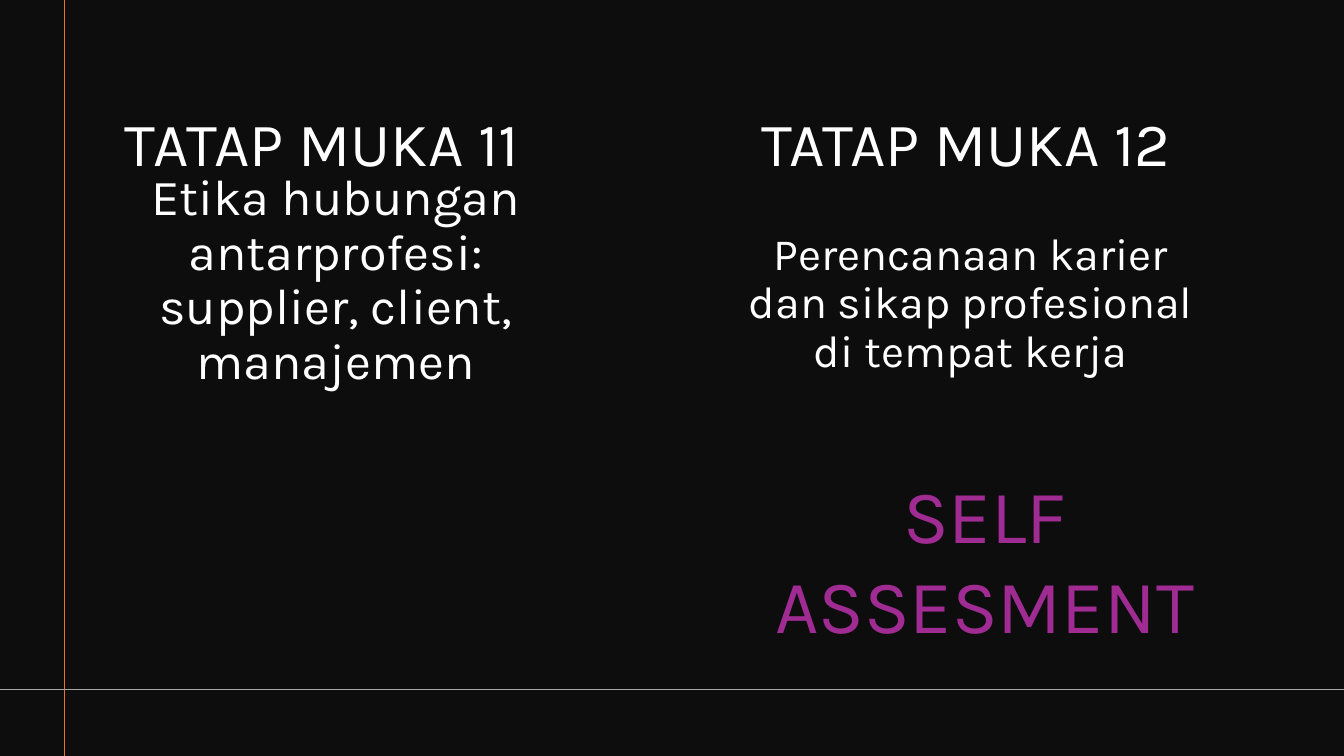
from pptx import Presentation
from pptx.dml.color import RGBColor
from pptx.enum.shapes import MSO_CONNECTOR as Connector, MSO_SHAPE as Shape
from pptx.enum.text import MSO_ANCHOR as Anchor, PP_ALIGN as Align
from pptx.oxml.ns import qn
from pptx.util import Inches, Pt
from lxml.etree import SubElement

COLORS = {
    "night": "0D0D0D",
    "white": "FFFFFF",
    "orange": "E97132",
    "gray": "A6A6A6",
    "purple": "A02B93",
}
WIDTH, HEIGHT = 13.33, 7.5


def color(name):
    return RGBColor.from_string(COLORS[name])


class SlideBuilder:
    """Holds the font and the page that elements are added to."""

    def __init__(self, page, font):
        self.page = page
        self.font = font

    def panel(self, left, top, width, height, fill):
        box = self.page.shapes.add_shape(
            Shape.RECTANGLE, Inches(left), Inches(top), Inches(width), Inches(height))
        box.shadow.inherit = False
        box.fill.solid()
        box.fill.fore_color.rgb = color(fill)
        box.line.fill.background()

    def rule(self, x1, y1, x2, y2, stroke):
        line = self.page.shapes.add_connector(
            Connector.STRAIGHT, Inches(x1), Inches(y1), Inches(x2), Inches(y2))
        line.line.color.rgb = color(stroke)
        line.line.width = Pt(1)
        SubElement(line._element.spPr, qn("a:effectLst"))

    def text(self, words, left, top, width, height, size, fill="white",
             align=Align.CENTER, anchor=Anchor.TOP, spacing=0.9, before=0, after=0):
        box = self.page.shapes.add_textbox(
            Inches(left), Inches(top), Inches(width), Inches(height))
        frame = box.text_frame
        frame.word_wrap = True
        frame.vertical_anchor = anchor
        para = frame.paragraphs[0]
        para.alignment = align
        para.line_spacing = spacing
        para.space_before = Pt(before)
        para.space_after = Pt(after)
        span = para.add_run()
        span.text = words
        span.font.name = self.font
        span.font.size = Pt(size)
        span.font.color.rgb = color(fill)


def main():
    deck = Presentation()
    deck.slide_width, deck.slide_height = Inches(WIDTH), Inches(HEIGHT)
    page = deck.slides.add_slide(deck.slide_layouts[6])
    slide = SlideBuilder(page, "Karla")

    slide.panel(0, 0, WIDTH, HEIGHT, "night")
    slide.text("Etika hubungan antarprofesi: supplier, client, manajemen",
               0.73, 2.11, 5.2, 1.81, 36, anchor=Anchor.BOTTOM, after=6)
    slide.text("Perencanaan karier dan sikap profesional di tempat kerja",
               7.27, 2.25, 4.72, 1.81, 32, before=10)
    slide.rule(0.64, 0, 0.64, HEIGHT, "orange")
    slide.rule(WIDTH, 6.84, 0, 6.84, "gray")
    for meeting, left in ((11, 1.14), (12, 7.45)):
        slide.text(f"TATAP MUKA {meeting}", left, 0.73, 4.36, 1.45, 44,
                   align=Align.LEFT, anchor=Anchor.MIDDLE)
    slide.text("SELF ASSESMENT", 6.74, 4.59, 6.05, 1.01, 54,
               fill="purple", spacing=1)
    deck.save("out.pptx")


if __name__ == "__main__":
    main()
